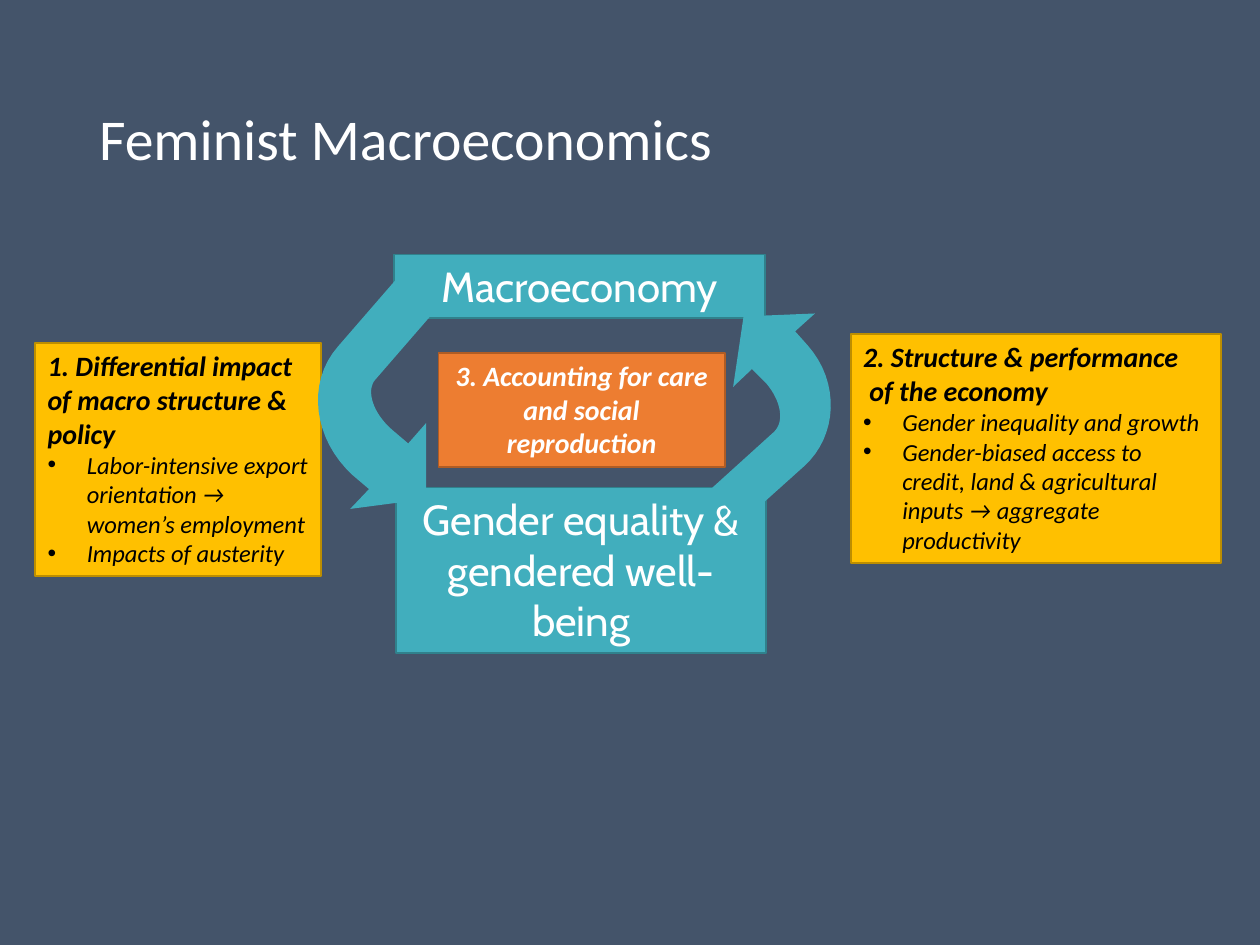
from lxml.etree import SubElement
from pptx import Presentation
from pptx.dml.color import RGBColor
from pptx.enum.shapes import MSO_SHAPE
from pptx.enum.text import MSO_ANCHOR, MSO_AUTO_SIZE, PP_ALIGN
from pptx.oxml.ns import qn
from pptx.util import Cm, Pt

SLATE = RGBColor(0x44, 0x54, 0x6A)
WHITE = RGBColor(0xFF, 0xFF, 0xFF)
BLACK = RGBColor(0x00, 0x00, 0x00)
GOLD = RGBColor(0xFF, 0xC0, 0x00)
GOLD_EDGE = RGBColor(0xBD, 0x8E, 0x00)
TEAL = RGBColor(0x41, 0xAE, 0xBD)
TEAL_EDGE = RGBColor(0x30, 0x81, 0x8C)
ORANGE = RGBColor(0xED, 0x7D, 0x31)
ORANGE_EDGE = RGBColor(0xAF, 0x5C, 0x24)

BULLET_INDENT = Cm(0.79)
CURVE_STEPS = 16

# Outlines in cm from the arrow's box corner: a pair is a straight step,
# six numbers are the two handles and the end of a Bézier curve.
DOWN_ARROW = [
    (2.59, 4.56), (1.06, 4.76), (1.44, 4.36), (1.11, 4.08),
    (0.32, 3.36, 0.17, 2.22, 0.81, 1.49),
    (1.98, 0.14), (2.74, 0.8), (1.57, 2.15),
    (1.37, 2.37, 1.52, 2.83, 1.9, 3.16),
    (2.23, 3.44), (2.59, 3.03),
]
UP_ARROW = [
    (0.99, 0.38), (2.43, 0.32), (2.03, 0.68), (2.28, 0.96),
    (2.94, 1.7, 2.89, 2.79, 2.21, 3.4),
    (0.94, 4.54), (0.33, 3.86), (1.6, 2.71),
    (1.82, 2.51, 1.75, 2.08, 1.44, 1.72),
    (1.16, 1.44), (0.78, 1.8),
]


def write(frame, text, *, size, color=WHITE, font="Calibri", bold=False,
          italic=False, align=PP_ALIGN.LEFT, bullet=False, spacing=None):
    """Add one paragraph, filling the first one while it is still empty."""
    first = frame.paragraphs[0]
    paragraph = frame.add_paragraph() if first.runs else first
    paragraph.alignment = align
    if spacing:
        paragraph.line_spacing = spacing
    if bullet:
        properties = paragraph._p.get_or_add_pPr()
        properties.set("marL", str(BULLET_INDENT))
        properties.set("indent", str(-BULLET_INDENT))
        SubElement(properties, qn("a:buFont"), typeface="Arial")
        SubElement(properties, qn("a:buChar"), char="•")
    run = paragraph.add_run()
    run.text = text
    run.font.size = Pt(size)
    run.font.name = font
    run.font.bold = bold
    run.font.italic = italic
    run.font.color.rgb = color


def add_title(slide, box, text):
    frame = slide.shapes.add_textbox(*map(Cm, box)).text_frame
    frame.word_wrap = True
    frame.vertical_anchor = MSO_ANCHOR.MIDDLE
    write(frame, text, size=33, spacing=0.9)


def add_panel(slide, box, fill, edge):
    """Add a bordered rectangle and return its text frame."""
    panel = slide.shapes.add_shape(MSO_SHAPE.RECTANGLE, *map(Cm, box))
    panel.shadow.inherit = False
    panel.fill.solid()
    panel.fill.fore_color.rgb = fill
    panel.line.color.rgb = edge
    panel.line.width = Pt(1)
    frame = panel.text_frame
    frame.word_wrap = True
    frame.auto_size = MSO_AUTO_SIZE.SHAPE_TO_FIT_TEXT
    frame.vertical_anchor = MSO_ANCHOR.TOP
    return frame


def add_channel(slide, box, heading, examples):
    frame = add_panel(slide, box, GOLD, GOLD_EDGE)
    for line in heading:
        write(frame, line, size=16, color=BLACK, bold=True, italic=True)
    for example in examples:
        write(frame, example, size=14, color=BLACK, italic=True, bullet=True)


def add_pole(slide, box, lines):
    frame = add_panel(slide, box, TEAL, TEAL_EDGE)
    for line in lines:
        write(frame, line, size=24, font="Cabin", align=PP_ALIGN.CENTER)


def add_care(slide, box, text):
    frame = add_panel(slide, box, ORANGE, ORANGE_EDGE)
    write(frame, text, size=16, bold=True, italic=True, align=PP_ALIGN.CENTER)


def trace(outline):
    """Turn an outline with Bézier steps into a list of points."""
    points = []
    for step in outline:
        if len(step) == 2:
            points.append(step)
            continue
        corners = [points[-1], step[:2], step[2:4], step[4:]]
        for i in range(1, CURVE_STEPS + 1):
            t = i / CURVE_STEPS
            weights = ((1 - t) ** 3, 3 * t * (1 - t) ** 2,
                       3 * t ** 2 * (1 - t), t ** 3)
            points.append(tuple(
                sum(w * corner[axis] for w, corner in zip(weights, corners))
                for axis in (0, 1)))
    return points


def add_curved_arrow(slide, left, top, outline):
    points = [(Cm(left + x), Cm(top + y)) for x, y in trace(outline)]
    builder = slide.shapes.build_freeform(*points[0])
    builder.add_line_segments(points[1:], close=True)
    arrow = builder.convert_to_shape()
    arrow.shadow.inherit = False
    arrow.fill.solid()
    arrow.fill.fore_color.rgb = TEAL
    arrow.line.fill.background()


def main():
    deck = Presentation()
    deck.slide_width, deck.slide_height = Cm(25.4), Cm(19.05)
    slide = deck.slides.add_slide(deck.slide_layouts[6])
    slide.background.fill.solid()
    slide.background.fill.fore_color.rgb = SLATE

    add_title(slide, (1.75, 1.02, 21.9, 3.68), "Feminist Macroeconomics")
    add_channel(slide, (0.71, 6.91, 5.77, 4.7),
                ["1. Differential impact of macro structure & policy"],
                ["Labor-intensive export orientation → women’s employment",
                 "Impacts of austerity"])
    add_channel(slide, (17.15, 6.73, 7.47, 4.62),
                ["2. Structure & performance", " of the economy"],
                ["Gender inequality and growth",
                 "Gender-biased access to credit, land & agricultural "
                 "inputs → aggregate productivity"])
    add_pole(slide, (7.95, 5.13, 7.47, 1.28), ["Macroeconomy"])
    add_pole(slide, (7.98, 9.83, 7.47, 3.33),
             ["Gender equality &", "gendered well-being"])
    add_curved_arrow(slide, 6, 5.5, DOWN_ARROW)
    add_curved_arrow(slide, 14, 6, UP_ARROW)
    add_care(slide, (8.84, 7.11, 5.77, 2.31),
             "3. Accounting for care and social reproduction")

    deck.save("out.pptx")


if __name__ == "__main__":
    main()
